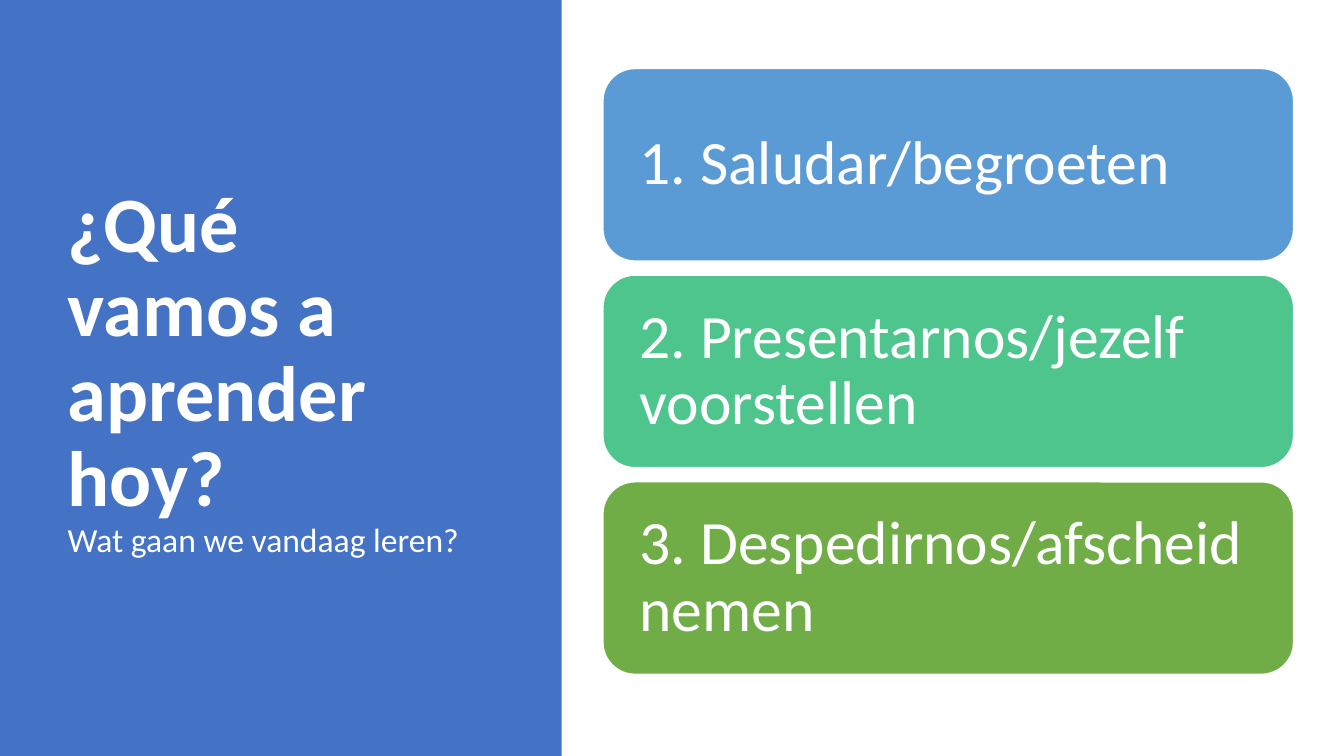
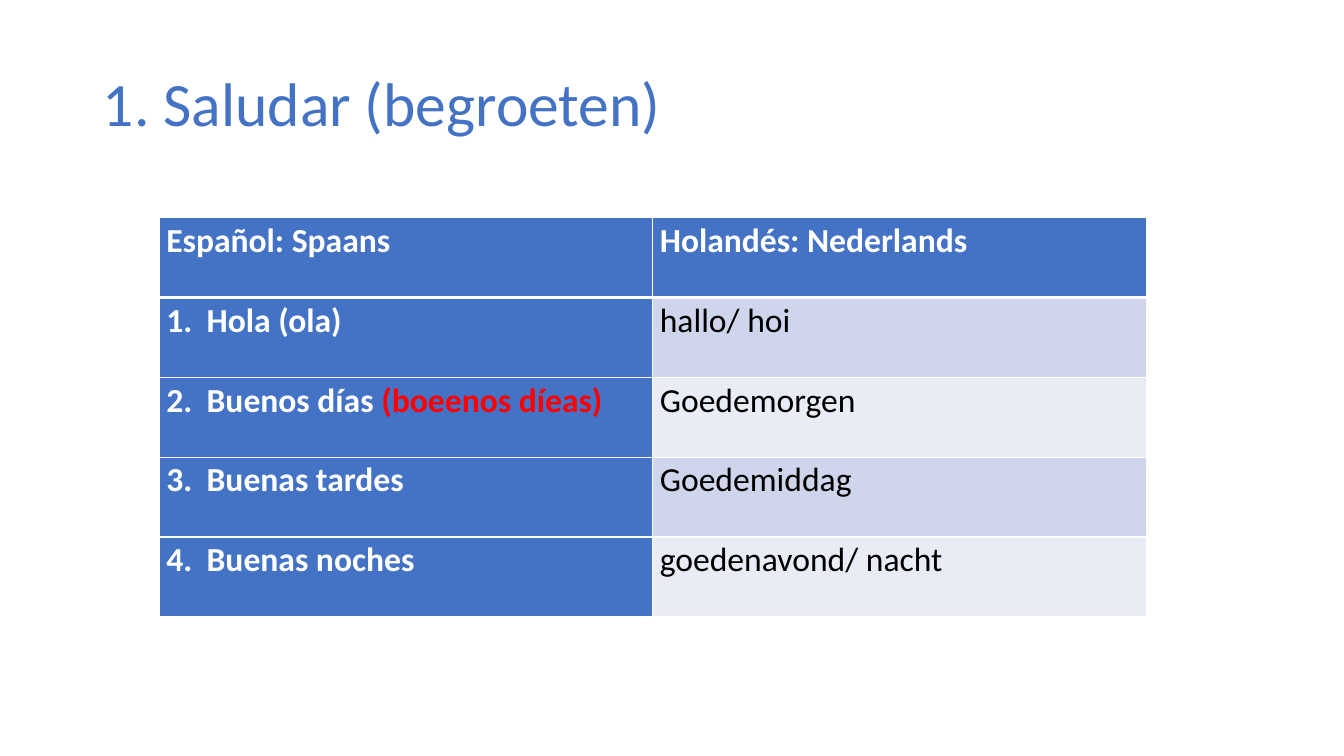
"""Build two Spanish lesson slides: the goals and the greetings table."""
from lxml import etree
from pptx import Presentation
from pptx.dml.color import RGBColor
from pptx.enum.shapes import MSO_SHAPE
from pptx.enum.text import MSO_ANCHOR, MSO_AUTO_SIZE, PP_ALIGN
from pptx.oxml.ns import qn
from pptx.util import Inches, Pt

RECT = MSO_SHAPE.RECTANGLE
ROUND = MSO_SHAPE.ROUNDED_RECTANGLE
MIDDLE = MSO_ANCHOR.MIDDLE
LEFT = PP_ALIGN.LEFT
NO_FIT = MSO_AUTO_SIZE.NONE

FONT = "Calibri"
HEX = {
    "blue": "4472C4", "sky": "5B9BD5", "mint": "4DC58D", "green": "70AD47",
    "white": "FFFFFF", "black": "000000", "red": "FF0000",
    "dark": "CFD5EA", "light": "E9EBF5",
}

ASK = "¿Qué vamos a aprender hoy?"
GLOSS = "Wat gaan we vandaag leren?"
GOALS = [
    ("1. Saludar/begroeten", "sky"),
    ("2. Presentarnos/jezelf voorstellen", "mint"),
    ("3. Despedirnos/afscheid nemen", "green"),
]
TOPIC = "1. Saludar (begroeten)"
HEADS = ["Español: Spaans", "Holandés: Nederlands"]
WORDS = [
    ("Hola (ola)", "", "hallo/ hoi"),
    ("Buenos días ", "(boeenos díeas)", "Goedemorgen"),
    ("Buenas tardes", "", "Goedemiddag"),
    ("Buenas noches", "", "goedenavond/ nacht"),
]


def color(name):
    return RGBColor.from_string(HEX[name])


def add_run(para, text, size, tint="white", bold=False):
    run = para.add_run()
    run.text = text
    font = run.font
    font.name, font.size, font.bold = FONT, Pt(size), bold
    font.color.rgb = color(tint)


def set_para(para, lead, after=0):
    para.alignment = LEFT
    para.line_spacing = lead
    para.space_before = Pt(0)
    para.space_after = Pt(after)


def add_title(slide, box):
    title = slide.shapes.title
    title.left, title.top, title.width, title.height = map(Inches, box)
    frame = title.text_frame
    frame.auto_size = NO_FIT
    frame.word_wrap = True
    frame.vertical_anchor = MIDDLE
    para = frame.paragraphs[0]
    set_para(para, 0.9)
    return para


def add_block(slide, kind, box, tint):
    block = slide.shapes.add_shape(kind, *map(Inches, box))
    block.shadow.inherit = False
    block.fill.solid()
    block.fill.fore_color.rgb = color(tint)
    block.line.fill.background()
    return block


def add_goal(slide, box, text, tint):
    card = add_block(slide, ROUND, box, tint)
    card.line.color.rgb = color("white")
    card.line.width = Pt(1)
    frame = card.text_frame
    frame.word_wrap = True
    frame.vertical_anchor = MIDDLE
    frame.margin_left = frame.margin_right = Inches(0.27)
    para = frame.paragraphs[0]
    set_para(para, 0.9)
    add_run(para, text, 44)


def add_edges(cell, widths):
    props = cell._tc.get_or_add_tcPr()
    for side, width in zip("LRTB", widths):
        edge = etree.SubElement(props, qn(f"a:ln{side}"), w=str(Pt(width)))
        fill = etree.SubElement(edge, qn("a:solidFill"))
        etree.SubElement(fill, qn("a:srgbClr"), val=HEX["white"])


def set_cell(cell, tint, widths):
    add_edges(cell, widths)
    cell.fill.solid()
    cell.fill.fore_color.rgb = color(tint)
    cell.margin_left = cell.margin_right = Inches(0.07)
    cell.margin_top = cell.margin_bottom = 0
    para = cell.text_frame.paragraphs[0]
    set_para(para, 1.07, 8)
    return para


def add_number(para, start):
    props = para._p.get_or_add_pPr()
    indent = Inches(0.4)
    props.set("marL", str(indent))
    props.set("indent", str(-indent))
    etree.SubElement(props, qn("a:buFont"), typeface=FONT)
    etree.SubElement(props, qn("a:buAutoNum"), type="arabicPeriod", startAt=str(start))


def build_goals(slide):
    para = add_title(slide, (0.57, 0.68, 4.16, 6.02))
    add_run(para, ASK, 56, bold=True)
    para.add_line_break()
    add_run(para, GLOSS, 24)
    panel = add_block(slide, RECT, (0, 0, 5.57, 7.5), "blue")
    slide.shapes.title.element.addprevious(panel.element)
    top, step = 0.68, 2.05
    for row, (text, tint) in enumerate(GOALS):
        add_goal(slide, (5.98, top + row * step, 6.85, 1.91), text, tint)


def build_words(slide):
    add_run(add_title(slide, (0.92, 0.33, 11.5, 1.45)), TOPIC, 44, "blue")
    box = map(Inches, (1.58, 2.16, 9.79, 3.96))
    table = slide.shapes.add_table(len(WORDS) + 1, len(HEADS), *box).table
    for col, head in enumerate(HEADS):
        para = set_cell(table.cell(0, col), "blue", (1, 1, 1, 3))
        add_run(para, head, 24, bold=True)
    for row, (word, sound, dutch) in enumerate(WORDS, 1):
        edges = (1, 1, 3 if row == 1 else 1, 1)
        para = set_cell(table.cell(row, 0), "blue", edges)
        add_number(para, row)
        add_run(para, word, 24, bold=True)
        if sound:
            add_run(para, sound, 24, "red", True)
        band = "dark" if row % 2 else "light"
        para = set_cell(table.cell(row, 1), band, edges)
        add_run(para, dutch, 24, "black")


def main():
    deck = Presentation()
    deck.slide_width, deck.slide_height = Inches(13.33), Inches(7.5)
    layout = deck.slide_layouts.get_by_name("Title Only")
    for build in (build_goals, build_words):
        build(deck.slides.add_slide(layout))
    deck.save("out.pptx")


if __name__ == "__main__":
    main()
